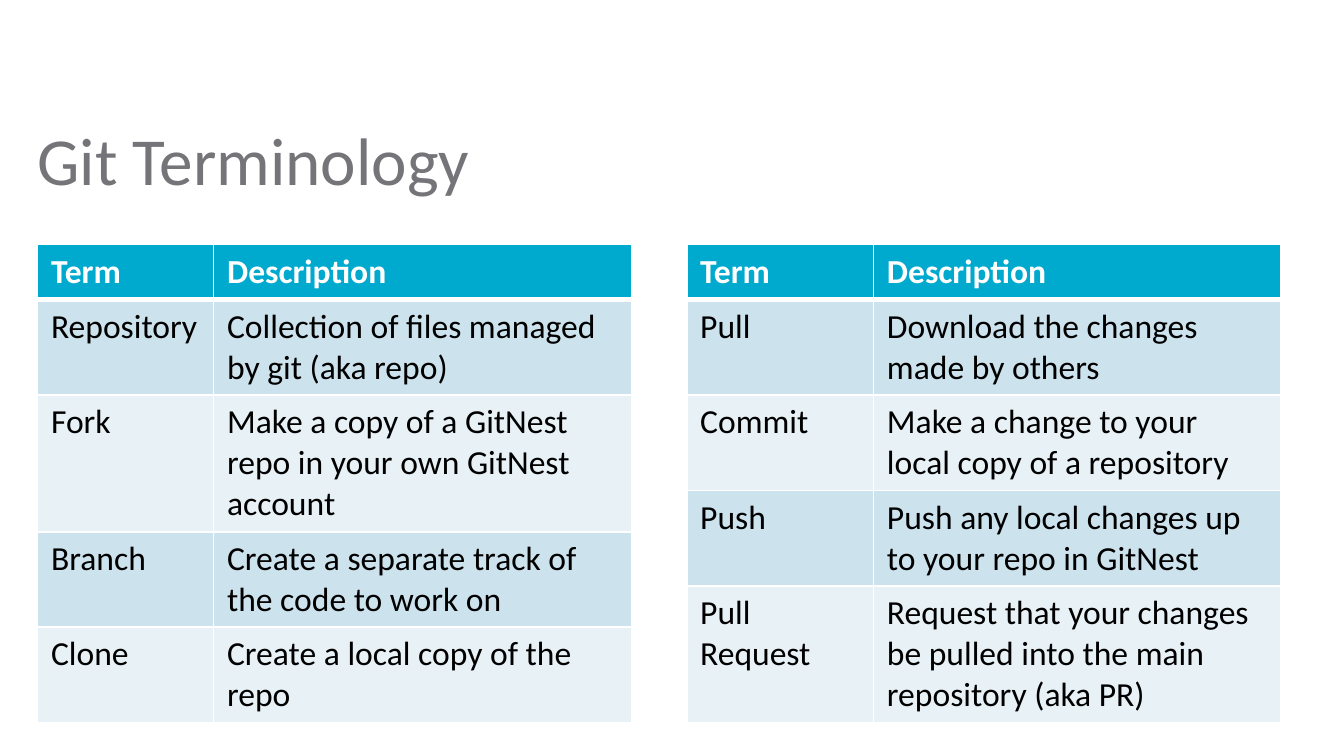
from lxml import etree
from pptx import Presentation
from pptx.dml.color import RGBColor
from pptx.enum.text import MSO_ANCHOR, PP_ALIGN
from pptx.oxml.ns import qn
from pptx.util import Inches, Pt

TOP = MSO_ANCHOR.TOP
LEFT = PP_ALIGN.LEFT
FONT = "Calibri"
HEADER_FILL = "00A9CE"
BAND_FILLS = ["CCE2ED", "E7F1F6"]
WHITE = "FFFFFF"


def add_text(frame, text, size, color, bold=False):
    para = frame.paragraphs[0]
    para.alignment = LEFT
    span = para.add_run()
    span.text = text
    span.font.name = FONT
    span.font.size = Pt(size)
    span.font.bold = bold
    span.font.color.rgb = RGBColor.from_string(color)


def add_border(cell, position, side, width):
    line = etree.Element(qn(f"a:ln{side}"), w=str(Pt(width)))
    fill = etree.SubElement(line, qn("a:solidFill"))
    etree.SubElement(fill, qn("a:srgbClr"), val=WHITE)
    # Borders come before the fill in the cell properties
    cell._tc.get_or_add_tcPr().insert(position, line)


# A 16:9 page
deck = Presentation()
deck.slide_width = Inches(10)
deck.slide_height = Inches(10 * 9 / 16)
page = deck.slides.add_slide(deck.slide_layouts[5])

# Title
title = page.shapes.title
title.left, title.top = Inches(0.28), Inches(0.88)
title.width, title.height = Inches(9.45), Inches(0.7)
frame = title.text_frame
frame.margin_left = frame.margin_right = frame.margin_top = frame.margin_bottom = 0
frame.vertical_anchor = TOP
frame.word_wrap = True
add_text(frame, "Git Terminology", 36, "757579")

# Glossary tables: left edge, column widths, terms
header = ("Term", "Description")
glossaries = [
    (0.28, (1.31, 3.11), [
        ("Repository", "Collection of files managed by git (aka repo)"),
        ("Fork", "Make a copy of a GitNest repo in your own GitNest account"),
        ("Branch", "Create a separate track of the code to work on"),
        ("Clone", "Create a local copy of the repo"),
    ]),
    (5.11, (1.39, 3.03), [
        ("Pull", "Download the changes made by others"),
        ("Commit", "Make a change to your local copy of a repository"),
        ("Push", "Push any local changes up to your repo in GitNest"),
        ("Pull Request", "Request that your changes be pulled into the main repository (aka PR)"),
    ]),
]
row_height = 0.41

for left, widths, terms in glossaries:
    rows = [header] + terms
    table = page.shapes.add_table(
        len(rows), len(widths), Inches(left), Inches(1.82),
        Inches(sum(widths)), Inches(row_height * len(rows))).table
    for column, width in zip(table.columns, widths):
        column.width = Inches(width)

    for row_index, texts in enumerate(rows):
        table.rows[row_index].height = Inches(row_height)
        is_header = row_index == 0
        fill = HEADER_FILL if is_header else BAND_FILLS[(row_index - 1) % 2]
        for column_index, text in enumerate(texts):
            cell = table.cell(row_index, column_index)
            cell.fill.solid()
            cell.fill.fore_color.rgb = RGBColor.from_string(fill)
            add_text(cell.text_frame, text, 18, WHITE if is_header else "000000", is_header)
            # A thicker rule separates the header from the terms
            for position, side in enumerate("LRTB"):
                thick = (row_index, side) in [(0, "B"), (1, "T")]
                add_border(cell, position, side, 3 if thick else 1)

deck.save("out.pptx")
